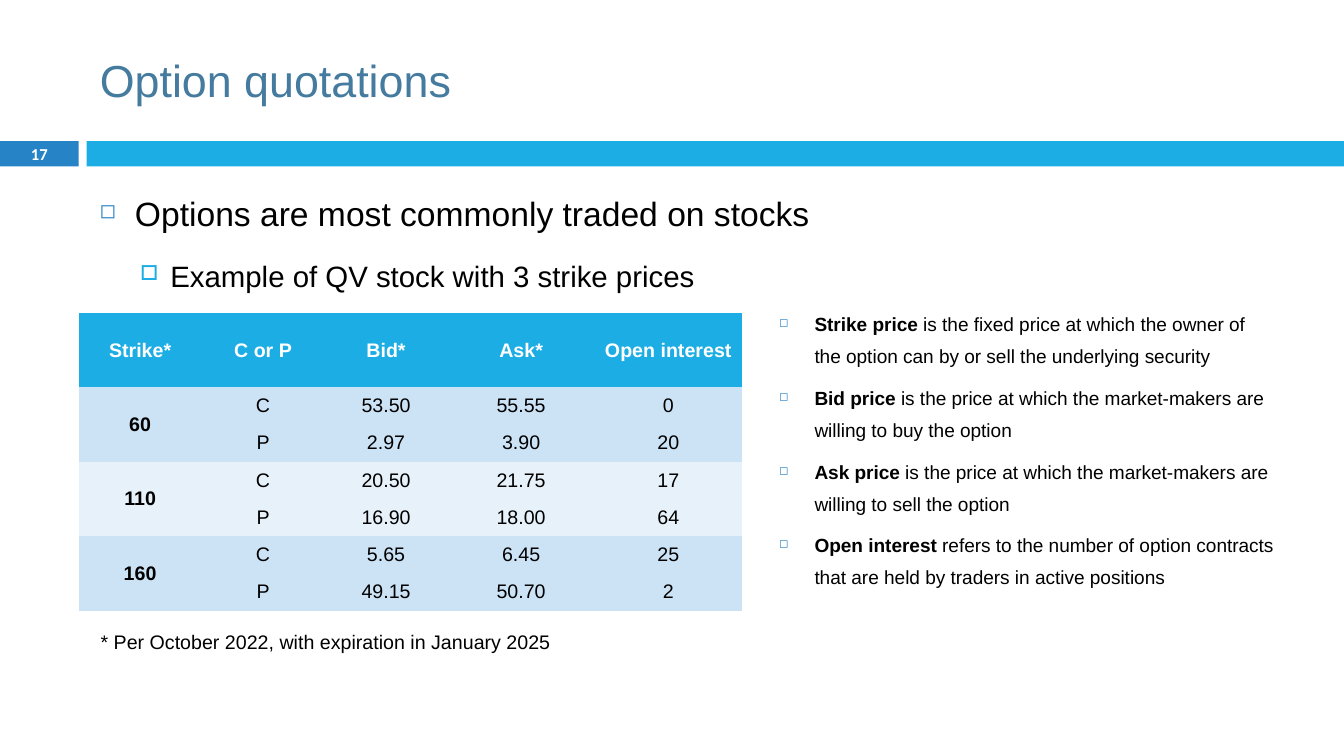
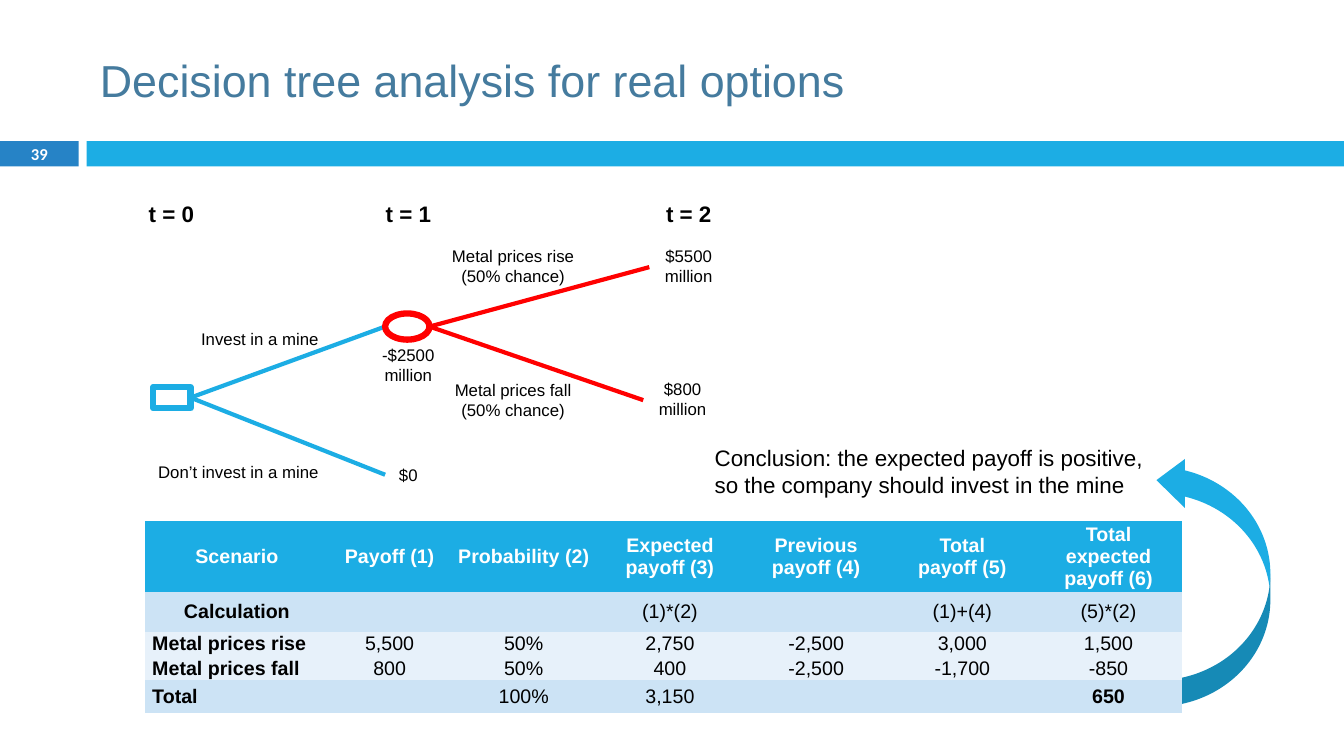
import lxml.etree
import pptx
import pptx.dml.color
import pptx.enum.shapes
import pptx.enum.text
import pptx.oxml.ns
import pptx.util

Inches = pptx.util.Inches
Pt = pptx.util.Pt
Shape = pptx.enum.shapes.MSO_SHAPE
Align = pptx.enum.text.PP_ALIGN
Anchor = pptx.enum.text.MSO_ANCHOR
qn = pptx.oxml.ns.qn

COLORS = {
    "title": "457B9E",
    "number": "2683C6",
    "accent": "1CADE4",
    "band": "CCE3F5",
    "pale_band": "E7F1FA",
    "chance": "FF0000",
    "text": "000000",
    "white": "FFFFFF",
}
NO_GRID_STYLE = "{2D5ABB26-0587-4C30-8999-92F81FD0307C}"


def rgb(color):
    return pptx.dml.color.RGBColor.from_string(COLORS[color])


def style_font(paragraph, size, color="text", bold=False, name="Arial"):
    font = paragraph.font
    font.name, font.size, font.bold = name, Pt(size), bold
    font.color.rgb = rgb(color)


def add_text(slide, box, text, size=12, color="text", bold=False,
             align=Align.LEFT, anchor=Anchor.TOP, name="Arial"):
    frame = slide.shapes.add_textbox(*map(Inches, box)).text_frame
    frame.word_wrap = True
    frame.vertical_anchor = anchor
    frame.text = text
    for paragraph in frame.paragraphs:
        paragraph.alignment = align
        style_font(paragraph, size, color, bold, name)


def add_block(slide, kind, box, fill, outline=None):
    block = slide.shapes.add_shape(kind, *map(Inches, box))
    block.shadow.inherit = False
    block.fill.solid()
    block.fill.fore_color.rgb = rgb(fill)
    if outline:
        block.line.color.rgb = rgb(outline)
        block.line.width = Pt(4.5)
    else:
        block.line.fill.background()
    return block


def add_branch(slide, start, end, color):
    branch = slide.shapes.add_connector(
        pptx.enum.shapes.MSO_CONNECTOR.STRAIGHT, *map(Inches, start + end))
    branch.line.color.rgb = rgb(color)
    branch.line.width = Pt(3)
    lxml.etree.SubElement(branch._element.spPr, qn("a:effectLst"))
    return branch


def set_bullet(paragraph, char, color, percent, left, hanging):
    props = paragraph._p.get_or_add_pPr()
    props.set("marL", str(Inches(left)))
    props.set("indent", str(-Inches(hanging)))
    bullet_color = lxml.etree.SubElement(props, qn("a:buClr"))
    lxml.etree.SubElement(bullet_color, qn("a:srgbClr"), val=COLORS[color])
    lxml.etree.SubElement(props, qn("a:buSzPct"), val=str(percent * 1000))
    lxml.etree.SubElement(props, qn("a:buChar"), char=char)


def add_bullets(slide, box, items, line_spacing):
    """Each item is (level, size, [(text, bold), ...])."""
    frame = slide.shapes.add_textbox(*map(Inches, box)).text_frame
    frame.word_wrap = True
    for index, (level, size, pieces) in enumerate(items):
        paragraph = frame.add_paragraph() if index else frame.paragraphs[0]
        paragraph.level = level
        if level:
            set_bullet(paragraph, "□", "accent", 70, 0.7, 0.3)
        else:
            set_bullet(paragraph, "◻", "number", 60, 0.35, 0.35)
        paragraph.line_spacing = line_spacing
        paragraph.space_before = Pt(5.5 if level else 7)
        style_font(paragraph, size)
        for text, bold in pieces:
            run = paragraph.add_run()
            run.text = text
            if bold:
                run.font.bold = True


def add_grid(slide, left, top, widths, heights, rows, fills):
    """Add a table with a bold first row and column, and one fill per row."""
    frame = slide.shapes.add_table(
        len(rows), len(widths), Inches(left), Inches(top),
        Inches(sum(widths)), Inches(sum(heights)))
    table = frame.table
    table._tbl.tblPr.find(qn("a:tableStyleId")).text = NO_GRID_STYLE
    table.first_row = table.horz_banding = False
    for column, width in zip(table.columns, widths):
        column.width = Inches(width)
    for r, (values, height, fill) in enumerate(zip(rows, heights, fills)):
        table.rows[r].height = Inches(height)
        for c, value in enumerate(values):
            cell = table.cell(r, c)
            cell.fill.solid()
            cell.fill.fore_color.rgb = rgb(fill)
            cell.margin_left = cell.margin_right = Inches(0.07)
            cell.margin_top = cell.margin_bottom = 0
            cell.vertical_anchor = Anchor.MIDDLE
            cell.text = value
            paragraph = cell.text_frame.paragraphs[0]
            paragraph.alignment = Align.CENTER
            style_font(paragraph, 14, "text" if r else "white",
                       bold=r == 0 or c == 0)
    return table


def add_titled_slide(deck, title, number):
    slide = deck.slides.add_slide(deck.slide_layouts[5])
    add_block(slide, Shape.RECTANGLE, (0, 1.4, 0.78, 0.25), "number")
    add_block(slide, Shape.RECTANGLE, (0.86, 1.4, 12.47, 0.25), "accent")
    heading = slide.shapes.title
    heading.left, heading.top = Inches(0.89), Inches(0.25)
    heading.width, heading.height = Inches(11.89), Inches(1.08)
    heading.text_frame.text = title
    heading.text_frame.vertical_anchor = Anchor.MIDDLE
    paragraph = heading.text_frame.paragraphs[0]
    paragraph.alignment = Align.LEFT
    style_font(paragraph, 32, "title")
    add_text(slide, (0, 1.39, 0.78, 0.27), number, 11.9, "white", True,
             Align.CENTER, Anchor.MIDDLE, "Calibri")
    return slide


def build_quotations(deck):
    slide = add_titled_slide(deck, "Option quotations", "17")
    add_bullets(slide, (0.89, 1.66, 11.21, 5.23), [
        (0, 24, [("Options are most commonly traded on stocks", False)]),
        (1, 21, [("Example of QV stock with 3 strike prices", False)]),
    ], 1.5)

    rows = [
        ("Strike*", "C or P", "Bid*", "Ask*", "Open interest"),
        ("60", "C", "53.50", "55.55", "0"),
        ("", "P", "2.97", "3.90", "20"),
        ("110", "C", "20.50", "21.75", "17"),
        ("", "P", "16.90", "18.00", "64"),
        ("160", "C", "5.65", "6.45", "25"),
        ("", "P", "49.15", "50.70", "2"),
    ]
    fills = ["accent"] + ["band"] * 2 + ["pale_band"] * 2 + ["band"] * 2
    quotes = add_grid(slide, 0.78, 3.11, [1.22] * 3 + [1.46] * 2,
                      [0.73] + [0.37] * 6, rows, fills)
    for r in range(1, len(rows), 2):
        quotes.cell(r, 0).merge(quotes.cell(r + 1, 0))

    add_text(slide, (0.9, 6.2, 5.06, 0.34),
             "* Per October 2022, with expiration in January 2025", 14)
    definitions = [
        ("Strike price", " is the fixed price at which the owner of the "
                         "option can by or sell the underlying security"),
        ("Bid price", " is the price at which the market-makers are "
                      "willing to buy the option"),
        ("Ask price", " is the price at which the market-makers are "
                      "willing to sell the option"),
        ("Open interest", " refers to the number of option contracts that "
                          "are held by traders in active positions"),
    ]
    add_bullets(slide, (7.63, 2.96, 5.12, 3.25),
                [(0, 13.6, [(term, True), (meaning, False)])
                 for term, meaning in definitions], 1.4)


def add_decision_tree(slide):
    decision = add_block(slide, Shape.RECTANGLE, (1.52, 3.84, 0.37, 0.21),
                         "white", "accent")
    for end in ((3.82, 3.24), (3.82, 4.71)):
        add_branch(slide, (1.89, 3.94), end, "accent").begin_connect(
            decision, 3)
    add_block(slide, Shape.OVAL, (3.82, 3.11, 0.44, 0.26), "white", "chance")
    for end in ((6.44, 2.65), (6.38, 3.97)):
        add_branch(slide, (4.26, 3.24), end, "chance")

    for left, time in ((1.31, "t = 0"), (3.66, "t = 1"), (6.44, "t = 2")):
        add_text(slide, (left, 1.94, 0.78, 0.37), time, 16, bold=True,
                 align=Align.CENTER)
    choices = [
        ((1.89, 3.21, 1.37, 0.3), "Invest in a mine"),
        ((1.39, 4.53, 1.87, 0.3), "Don’t invest in a mine"),
    ]
    outcomes = [
        ((3.82, 4.56, 0.46, 0.3), "$0"),
        ((3.66, 3.37, 0.78, 0.5), "-$2500 million"),
        ((6.44, 2.39, 0.78, 0.5), "$5500 million"),
        ((6.38, 3.71, 0.78, 0.5), "$800\nmillion"),
        ((4.26, 2.39, 1.66, 0.5), "Metal prices rise\n(50% chance)"),
        ((4.26, 3.72, 1.66, 0.5), "Metal prices fall\n(50% chance)"),
    ]
    for labels, align in ((choices, Align.RIGHT), (outcomes, Align.CENTER)):
        for box, text in labels:
            add_text(slide, box, text, align=align)


def build_decision_analysis(deck):
    slide = add_titled_slide(
        deck, "Decision tree analysis for real options", "39")
    conclusion_arrow = add_block(slide, Shape.CURVED_LEFT_ARROW,
                                 (11.47, 4.52, 1.13, 2.49), "accent")
    conclusion_arrow._element.spPr.xfrm.set("flipV", "1")
    for index, value in enumerate((0.23, 0.43, 0.25)):
        conclusion_arrow.adjustments[index] = value
    add_decision_tree(slide)

    rows = [
        ("Scenario", "Payoff (1)", "Probability (2)", "Expected payoff (3)",
         "Previous payoff (4)", "Total\vpayoff (5)",
         "Total expected payoff (6)"),
        ("Calculation", "", "", "(1)*(2)", "", "(1)+(4)", "(5)*(2)"),
        ("Metal prices rise", "5,500", "50%", "2,750", "-2,500", "3,000",
         "1,500"),
        ("Metal prices fall", "800", "50%", "400", "-2,500", "-1,700",
         "-850"),
        ("Total", "", "100%", "3,150", "", "", "650"),
    ]
    payoffs = add_grid(slide, 1.44, 5.17, [1.82, 1.21] + [1.45] * 5,
                       [0.7, 0.4, 0.24, 0.24, 0.32], rows,
                       ["accent", "band", "pale_band", "pale_band", "band"])
    for r in range(2, len(rows)):
        scenario = payoffs.cell(r, 0).text_frame.paragraphs[0]
        scenario.alignment = Align.LEFT
    payoffs.cell(4, 6).text_frame.paragraphs[0].font.bold = True

    add_text(slide, (6.99, 4.35, 4.46, 0.64),
             "Conclusion: the expected payoff is positive, "
             "so the company should invest in the mine", 16,
             anchor=Anchor.MIDDLE)


def main():
    deck = pptx.Presentation()
    deck.slide_width, deck.slide_height = Inches(13.33), Inches(7.5)
    build_quotations(deck)
    build_decision_analysis(deck)
    deck.save("out.pptx")


if __name__ == "__main__":
    main()
